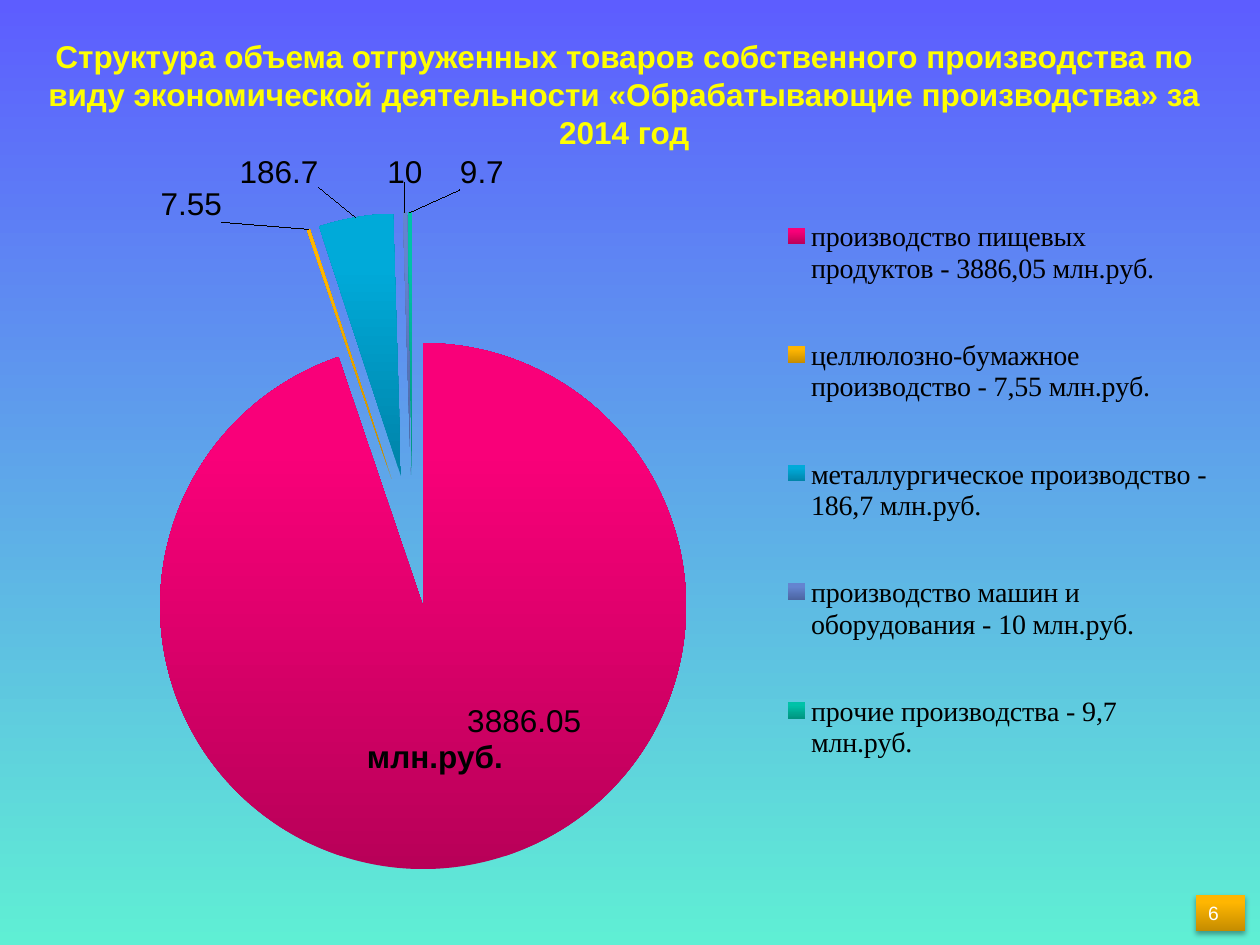
from dataclasses import dataclass

from lxml import etree
from pptx import Presentation
from pptx.chart.data import CategoryChartData
from pptx.dml.color import RGBColor
from pptx.enum import chart as ch, shapes, text
from pptx.oxml import parse_xml
from pptx.oxml.ns import nsdecls, qn
from pptx.util import Inches, Pt


@dataclass(frozen=True)
class Theme:
    sans: str = "Arial"
    serif: str = "Times New Roman"
    title: str = "FFFF00"
    ink: str = "000000"
    light: str = "FFFFFF"
    sky: tuple = ("5D5DFF", "5FEFD4")
    badge: tuple = ("C58C00", "FFB601")
    title_size: int = 18
    label_size: int = 18
    legend_size: int = 16
    number_size: int = 11


T = Theme()

# Category, value, (dark, bright) slice colours, label offset as chart fractions
SLICES = [
    ("", None, ("5A9C20", "7FD13B"), None),
    ("производство пищевых продуктов - 3886,05 млн.руб.", 3886.05,
     ("B80058", "F90079"), (0, -0.22)),
    ("целлюлозно-бумажное производство - 7,55 млн.руб.", 7.55,
     ("C58C00", "FFB601"), (-0.07, 0)),
    ("металлургическое производство - 186,7 млн.руб.", 186.7,
     ("0083A8", "00AAD9"), (-0.03, -0.03)),
    ("производство машин и оборудования - 10 млн.руб.", 10,
     ("4C64A0", "6484D0"), (0, -0.03)),
    ("прочие производства - 9,7 млн.руб.", 9.7,
     ("009580", "00C2A8"), (0.06, -0.02)),
]


def style(font, name, size, color, bold=False):
    font.name, font.size, font.bold = name, Pt(size), bold
    font.color.rgb = RGBColor.from_string(color)


def gradient(fill, colors, angle, end=1.0):
    """Two-colour linear fill; angle runs counter-clockwise."""
    fill.gradient()
    fill.gradient_angle = angle
    for stop, color, pos in zip(fill.gradient_stops, colors, (0, end)):
        stop.color.rgb = RGBColor.from_string(color)
        stop.position = pos


def set_layout(parent, index, target=None, edge=True, **place):
    """Put a manual layout into a chart part, as fractions of the chart."""
    for old in parent.findall(qn("c:layout")):
        parent.remove(old)
    layout = etree.Element(qn("c:layout"))
    manual = etree.SubElement(layout, qn("c:manualLayout"))
    if target:
        etree.SubElement(manual, qn("c:layoutTarget")).set("val", target)
    if edge:
        for mode in ("c:xMode", "c:yMode"):
            etree.SubElement(manual, qn(mode)).set("val", "edge")
    for key, value in place.items():
        etree.SubElement(manual, qn(f"c:{key}")).set("val", str(value))
    parent.insert(index, layout)


def add_title(slide, box):
    sp = slide.shapes.title
    sp.left, sp.top, sp.width, sp.height = box
    tf = sp.text_frame
    tf.word_wrap = True
    tf.vertical_anchor = text.MSO_ANCHOR.MIDDLE
    p = tf.paragraphs[0]
    p.text = ("Структура объема отгруженных товаров собственного производства "
              "по виду экономической деятельности «Обрабатывающие "
              "производства» за 2014 год")
    p.alignment = text.PP_ALIGN.CENTER
    style(p.font, T.sans, T.title_size, T.title, True)


def format_slices(series):
    series.format.line.fill.background()
    etree_explosion = parse_xml(f'<c:explosion {nsdecls("c")} val="25"/>')
    series._element.find(qn("c:spPr")).addnext(etree_explosion)

    labels = series.data_labels
    labels.show_value = True
    labels.position = ch.XL_LABEL_POSITION.BEST_FIT
    style(labels.font, T.sans, T.label_size, T.ink)
    for i, (_, _, colors, offset) in enumerate(SLICES):
        point = series.points[i]
        gradient(point.format.fill, colors, 90, 0.8)
        point.format.line.fill.background()
        if offset:
            label = point.data_label
            style(label.font, T.sans, T.label_size, T.ink)
            label.position = ch.XL_LABEL_POSITION.BEST_FIT
            node = series._element.xpath(f"c:dLbls/c:dLbl[c:idx/@val='{i}']")[0]
            set_layout(node, 1, edge=False, x=offset[0], y=offset[1])


def add_pie(slide, box):
    data = CategoryChartData()
    data.categories = [s[0] for s in SLICES]
    data.add_series("Series 1", [s[1] for s in SLICES])
    chart = slide.shapes.add_chart(ch.XL_CHART_TYPE.PIE, *box, data).chart
    style(chart.font, T.sans, T.label_size, T.ink)
    chart.plots[0].vary_by_categories = True
    format_slices(chart.plots[0].series[0])
    set_layout(chart._chartSpace.chart.plotArea, 0, "inner",
               x=0.03, y=0.075, w=0.585, h=0.857)

    # Unit caption lies over the large slice
    title = chart.chart_title
    p = title.text_frame.paragraphs[0]
    p.text = "млн.руб."
    style(p.font, T.sans, T.label_size, T.ink, True)
    set_layout(title._element, 1, x=0.28, y=0.75)
    title._element.find(qn("c:overlay")).set("val", "1")

    # Legend without the unnamed first category
    chart.has_legend = True
    legend = chart.legend
    legend.position = ch.XL_LEGEND_POSITION.CORNER
    legend.include_in_layout = False
    style(legend.font, T.serif, T.legend_size, T.ink)
    set_layout(legend._element, 1, x=0.64, y=0.015, w=0.35, h=0.845)
    legend._element.insert(1, parse_xml(
        f'<c:legendEntry {nsdecls("c")}><c:idx val="0"/>'
        '<c:delete val="1"/></c:legendEntry>'))


def add_page_number(slide, box):
    sp = slide.shapes.add_shape(shapes.MSO_SHAPE.RECTANGLE, *box)
    gradient(sp.fill, T.badge, 90, 0.8)
    sp.line.fill.background()
    sp.shadow.inherit = False
    effects = sp._element.spPr.find(qn("a:effectLst"))
    effects.append(parse_xml(
        f'<a:outerShdw {nsdecls("a")} blurRad="{Pt(3.1)}" dist="{Pt(1.8)}" '
        'dir="5400000" rotWithShape="0"><a:srgbClr val="000000">'
        '<a:alpha val="35000"/></a:srgbClr></a:outerShdw>'))
    p = sp.text_frame.paragraphs[0]
    p.text = "6"
    p.alignment = text.PP_ALIGN.LEFT
    style(p.font, T.sans, T.number_size, T.light)


def main():
    prs = Presentation()
    prs.slide_width, prs.slide_height = Inches(10), Inches(7.5)
    slide = prs.slides.add_slide(prs.slide_layouts[5])
    gradient(slide.background.fill, T.sky, 270)
    add_title(slide, [Inches(v) for v in (0.23, 0.16, 9.45, 1.17)])
    add_pie(slide, [Inches(v) for v in (0.2, 1.23, 9.53, 6.09)])
    add_page_number(slide, [Inches(v) for v in (9.49, 7.1, 0.39, 0.29)])
    prs.save("out.pptx")


if __name__ == "__main__":
    main()
